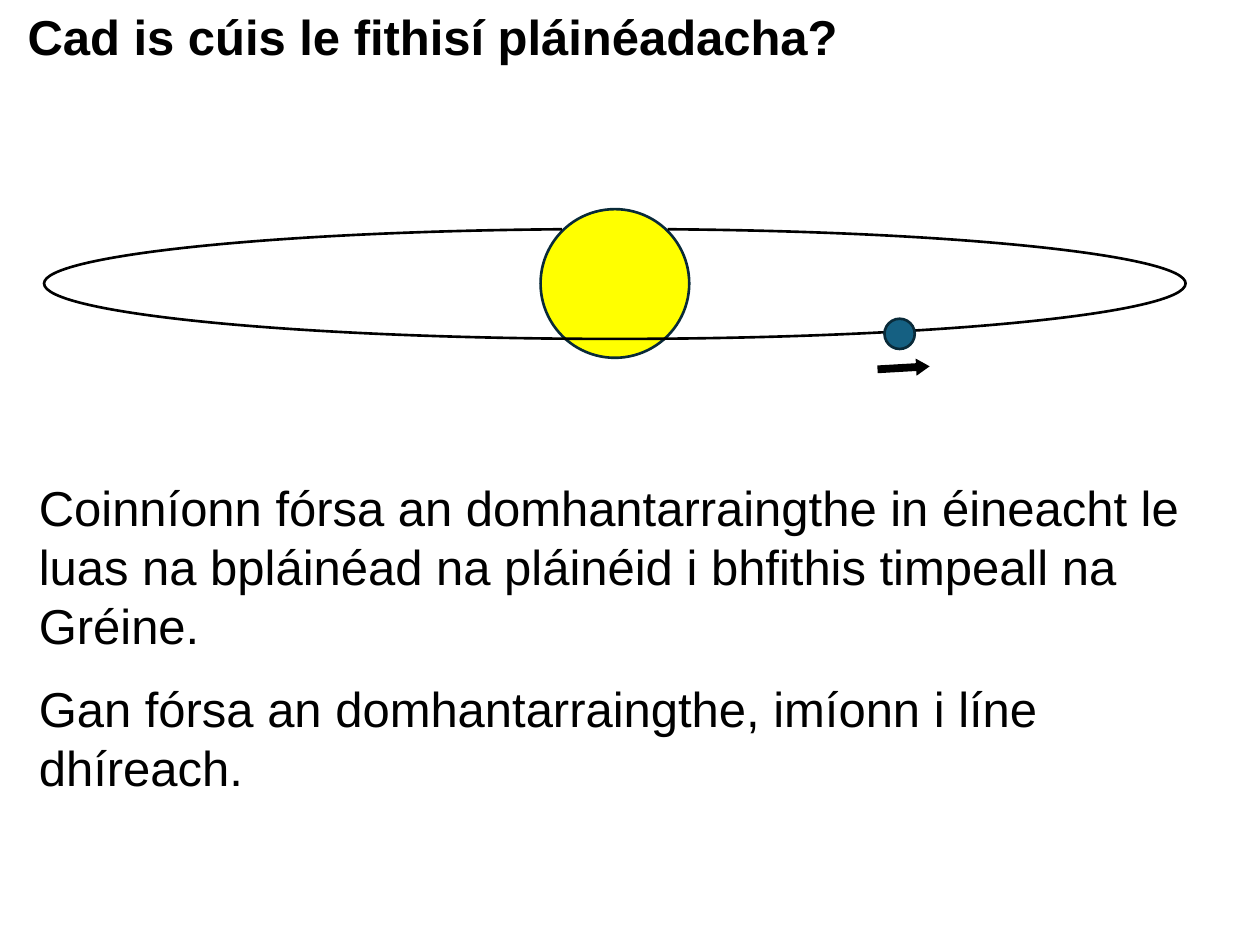
from lxml import etree
from pptx import Presentation
from pptx.dml.color import RGBColor
from pptx.enum.shapes import MSO_SHAPE as SHAPE
from pptx.enum.text import MSO_AUTO_SIZE as AUTO
from pptx.oxml.ns import qn
from pptx.util import Inches, Pt


def color(hex_value):
    return RGBColor.from_string(hex_value)


def style(sp, fill, line, width):
    sp.shadow.inherit = False
    if fill:
        sp.fill.solid()
        sp.fill.fore_color.rgb = color(fill)
    else:
        sp.fill.background()
    sp.line.color.rgb = color(line)
    sp.line.width = Pt(width)
    ln = sp._element.spPr.find(qn("a:ln"))
    etree.SubElement(ln, qn("a:miter"), lim="800000")


prs = Presentation()
prs.slide_width, prs.slide_height = Inches(10), Inches(7.5)
s = prs.slides.add_slide(prs.slide_layouts[6])

# Explanation and title
texts = [
    ((0.21, 3.74, 9.52, 2.69), False, [
        "Coinníonn fórsa an domhantarraingthe in éineacht le luas na bpláinéad "
        "na pláinéid i bhfithis timpeall na Gréine.",
        "Gan fórsa an domhantarraingthe, imíonn i líne dhíreach."]),
    ((0.12, 0, 9.88, 0.57), True, ["Cad is cúis le fithisí pláinéadacha?"]),
]
for box, bold, lines in texts:
    tf = s.shapes.add_textbox(*map(Inches, box)).text_frame
    tf.word_wrap = True
    tf.auto_size = AUTO.SHAPE_TO_FIT_TEXT
    tf.text = "\n".join(lines)
    for p in tf.paragraphs:
        p.space_before = Pt(14)
        font = p.runs[0].font
        font.name, font.size, font.bold = "Arial", Pt(28), bold
        font.color.rgb = color("000000")

# Sun
sun = s.shapes.add_shape(SHAPE.OVAL, Inches(4.29), Inches(1.66), Inches(1.18), Inches(1.18))
style(sun, "FFFF00", "092A39", 1.5)

# Orbit: an ellipse left open where it passes behind the sun
left, top = 0.35, 1.82
anchors = [(5.3, 1.82), (5.34, 1.82), (9.41, 2.25), (4.88, 2.69),
           (0.35, 2.25), (4.42, 1.82), (4.46, 1.82)]
# Two control points for each curved segment, by segment number
controls = {1: [(7.63, 1.84), (9.41, 2.03)], 2: [(9.41, 2.49), (7.38, 2.69)],
            3: [(2.38, 2.69), (0.35, 2.49)], 4: [(0.35, 2.03), (2.14, 1.84)]}
points = [(Inches(x), Inches(y)) for x, y in anchors]
builder = s.shapes.build_freeform(*points[0])
builder.add_line_segments(points[1:], close=False)
orbit = builder.convert_to_shape()
segments = list(orbit._element.iter(qn("a:lnTo")))
for number, handles in controls.items():
    segment = segments[number]
    curve = etree.Element(qn("a:cubicBezTo"))
    for x, y in handles:
        etree.SubElement(curve, qn("a:pt"), x=str(Inches(x - left)), y=str(Inches(y - top)))
    curve.append(segment[0])
    segment.getparent().replace(segment, curve)
style(orbit, None, "000000", 1.5)

# Planet and its direction of travel
planet = s.shapes.add_shape(SHAPE.OVAL, Inches(7.02), Inches(2.53), Inches(0.24), Inches(0.24))
style(planet, "156082", "092A39", 1.5)
arrow = s.shapes.add_shape(SHAPE.RIGHT_ARROW, Inches(6.98), Inches(2.88), Inches(0.37), Inches(0.08))
arrow.adjustments[0], arrow.adjustments[1] = 0.38, 0.79
arrow.rotation = -3.3
style(arrow, "000000", "000000", 2.25)

prs.save("out.pptx")
